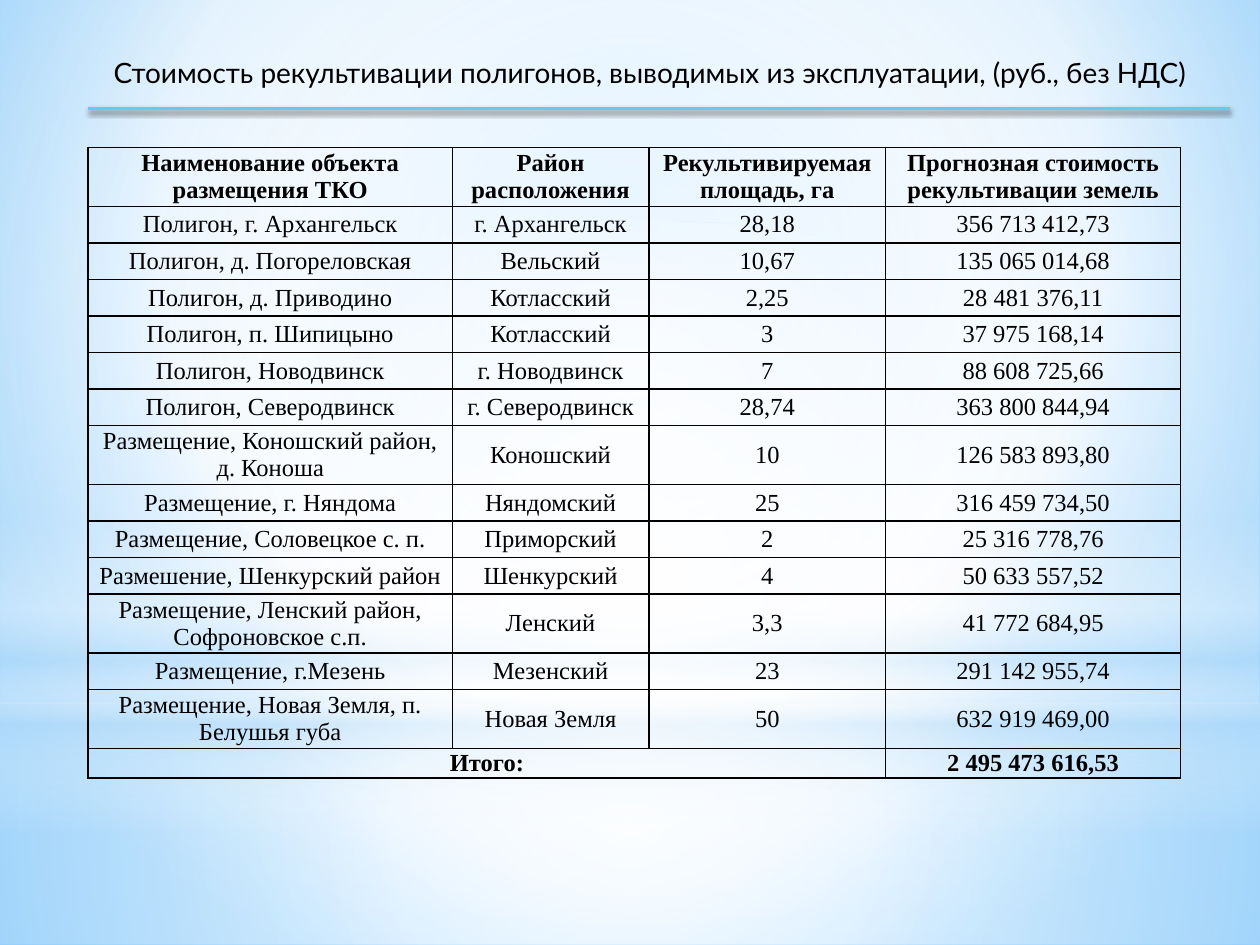
from dataclasses import dataclass
from typing import NamedTuple, Optional

from lxml.etree import SubElement
from pptx import Presentation
from pptx.dml.color import RGBColor
from pptx.enum.shapes import MSO_CONNECTOR, MSO_SHAPE
from pptx.enum.text import MSO_ANCHOR, MSO_AUTO_SIZE, PP_ALIGN
from pptx.oxml import parse_xml
from pptx.oxml.ns import nsdecls, qn
from pptx.util import Inches, Pt


@dataclass(frozen=True)
class Theme:
    black: str = "000000"
    white: str = "FFFFFF"
    pale: str = "B4DCFA"
    sky: str = "9ED5FF"
    deep: str = "5BB9FF"
    accent: str = "5ECCF3"
    title_font: str = "Lato"
    table_font: str = "Times New Roman"
    title_size: int = 16
    table_size: int = 14
    border_width: int = 1
    rule_width: int = 2


class Box(NamedTuple):
    """Position and size in percent of the slide."""
    left: float
    top: float
    width: float
    height: float


class Stop(NamedTuple):
    position: int
    color: str
    opacity: int = 100


class Gradient(NamedTuple):
    stops: tuple[Stop, ...]
    focus: Optional[tuple[int, int, int, int]] = (50, 50, 50, 50)


class Backdrop(NamedTuple):
    kind: MSO_SHAPE
    box: Box
    gradient: Gradient


class Site(NamedTuple):
    name: str
    district: str
    area: str
    cost: str


THEME = Theme()
WIDTH, HEIGHT = Inches(10), Inches(7.5)
TITLE = "Стоимость рекультивации полигонов, выводимых из эксплуатации, (руб., без НДС)"
TITLE_BOX = Box(5.5, 5.2, 92.2, 4.93)
RULE_BOX = Box(7, 11.47, 90.6, 0)
TABLE_BOX = Box(7, 15.6, 86.7, 66.93)
COLUMNS = (28.9, 15.6, 18.8, 23.4)
HEADER_HEIGHT, ROW_HEIGHT, TOTAL_HEIGHT = 5.87, 3.87, 2.8
PAGE = Gradient((Stop(0, THEME.sky), Stop(60, THEME.white), Stop(100, THEME.deep)),
                (20, 10, 20, 60))
BACKDROPS = (
    Backdrop(MSO_SHAPE.RECTANGLE, Box(0, 74.4, 100, 25.6), Gradient((
        Stop(0, THEME.white, 91), Stop(37, THEME.white, 76), Stop(100, THEME.pale, 79)))),
    Backdrop(MSO_SHAPE.RECTANGLE, Box(0, 0, 100, 74.4), Gradient((
        Stop(0, THEME.white, 89), Stop(48, THEME.white, 62), Stop(100, THEME.pale, 79)))),
    Backdrop(MSO_SHAPE.RECTANGLE, Box(0, 54.93, 100, 33.33), Gradient((
        Stop(0, THEME.white, 0), Stop(29, THEME.white, 30), Stop(45, THEME.pale, 40),
        Stop(55, THEME.white, 26), Stop(65, THEME.pale, 60), Stop(100, THEME.white, 0)), None)),
    Backdrop(MSO_SHAPE.OVAL, Box(0, 23.33, 100, 74.4), Gradient((
        Stop(0, THEME.white), Stop(56, THEME.white, 0)))),
)
HEADER = Site("Наименование объекта размещения ТКО", "Район расположения",
              "Рекультивируемая площадь, га", "Прогнозная стоимость рекультивации земель")
SITES = (
    Site("Полигон, г. Архангельск", "г. Архангельск", "28,18", "356 713 412,73"),
    Site("Полигон, д. Погореловская", "Вельский", "10,67", "135 065 014,68"),
    Site("Полигон, д. Приводино", "Котласский", "2,25", "28 481 376,11"),
    Site("Полигон, п. Шипицыно", "Котласский", "3", "37 975 168,14"),
    Site("Полигон, Новодвинск", "г. Новодвинск", "7", "88 608 725,66"),
    Site("Полигон, Северодвинск", "г. Северодвинск", "28,74", "363 800 844,94"),
    Site("Размещение, Коношский район, д. Коноша", "Коношский", "10", "126 583 893,80"),
    Site("Размещение, г. Няндома", "Няндомский", "25", "316 459 734,50"),
    Site("Размещение, Соловецкое с. п.", "Приморский", "2", "25 316 778,76"),
    Site("Размешение, Шенкурский район", "Шенкурский", "4", "50 633 557,52"),
    Site("Размещение, Ленский район, Софроновское с.п.", "Ленский", "3,3", "41 772 684,95"),
    Site("Размещение, г.Мезень", "Мезенский", "23", "291 142 955,74"),
    Site("Размещение, Новая Земля, п. Белушья губа", "Новая Земля", "50", "632 919 469,00"),
)
TOTAL = Site("Итого:", "", "", "2 495 473 616,53")


def across(share: float) -> int:
    return round(WIDTH * share / 100)


def down(share: float) -> int:
    return round(HEIGHT * share / 100)


def place(box: Box) -> tuple[int, int, int, int]:
    return across(box.left), down(box.top), across(box.width), down(box.height)


def set_gradient(owner, fill, gradient: Gradient) -> None:
    stops = "".join(
        f'<a:gs pos="{stop.position * 1000}"><a:srgbClr val="{stop.color}">'
        f'<a:alpha val="{stop.opacity * 1000}"/></a:srgbClr></a:gs>' for stop in gradient.stops)
    direction = '<a:lin ang="5400000" scaled="0"/>'
    if gradient.focus:
        sides = " ".join(f'{side}="{share * 1000}"' for side, share in zip("ltrb", gradient.focus))
        direction = f'<a:path path="circle"><a:fillToRect {sides}/></a:path>'
    fill.solid()
    solid = owner.find(f".//{qn('a:solidFill')}")
    solid.getparent().replace(solid, parse_xml(
        f'<a:gradFill {nsdecls("a")} rotWithShape="1"><a:gsLst>{stops}</a:gsLst>'
        f'{direction}</a:gradFill>'))


def style_font(paragraph, name: str, size: int, bold: bool) -> None:
    paragraph.alignment = PP_ALIGN.CENTER
    paragraph.font.name = name
    paragraph.font.size = Pt(size)
    paragraph.font.bold = bold
    paragraph.font.color.rgb = RGBColor.from_string(THEME.black)


def draw_backdrop(slide, backdrop: Backdrop) -> None:
    shape = slide.shapes.add_shape(backdrop.kind, *place(backdrop.box))
    shape.shadow.inherit = False
    shape.line.fill.background()
    set_gradient(shape.element, shape.fill, backdrop.gradient)
    slide.shapes.title.element.addprevious(shape.element)


def draw_title(slide) -> None:
    title = slide.shapes.title
    title.left, title.top, title.width, title.height = place(TITLE_BOX)
    frame = title.text_frame
    frame.text = TITLE
    frame.word_wrap = True
    frame.vertical_anchor = MSO_ANCHOR.TOP
    frame.auto_size = MSO_AUTO_SIZE.SHAPE_TO_FIT_TEXT
    style_font(frame.paragraphs[0], THEME.title_font, THEME.title_size, False)


def draw_rule(slide) -> None:
    left, top, width, height = place(RULE_BOX)
    rule = slide.shapes.add_connector(MSO_CONNECTOR.STRAIGHT, left, top, left + width, top + height)
    rule.line.color.rgb = RGBColor.from_string(THEME.accent)
    rule.line.width = Pt(THEME.rule_width)
    rule.element.spPr.append(parse_xml(
        f'<a:effectLst {nsdecls("a")}><a:outerShdw blurRad="{Pt(3.1)}" dist="{Pt(1.8)}" '
        f'dir="5400000" rotWithShape="0"><a:srgbClr val="{THEME.black}">'
        '<a:alpha val="45000"/></a:srgbClr></a:outerShdw></a:effectLst>'))


def format_cell(cell, text: str, bold: bool) -> None:
    cell.text = text
    cell.vertical_anchor = MSO_ANCHOR.MIDDLE
    cell.margin_left = cell.margin_right = Inches(0.06)
    cell.margin_top = cell.margin_bottom = 0
    style_font(cell.text_frame.paragraphs[0], THEME.table_font, THEME.table_size, bold)
    properties = cell._tc.get_or_add_tcPr()
    for side in "LRTB":
        border = SubElement(properties, qn(f"a:ln{side}"), w=str(Pt(THEME.border_width)))
        SubElement(SubElement(border, qn("a:solidFill")), qn("a:srgbClr"), val=THEME.black)
    cell.fill.background()


def draw_table(slide) -> None:
    records = (HEADER, *SITES, TOTAL)
    heights = (HEADER_HEIGHT, *[ROW_HEIGHT] * len(SITES), TOTAL_HEIGHT)
    table = slide.shapes.add_table(len(records), len(COLUMNS), *place(TABLE_BOX)).table
    table.first_row = table.horz_banding = False
    for column, share in zip(table.columns, COLUMNS):
        column.width = across(share)
    for row, share, record in zip(table.rows, heights, records):
        row.height = down(share)
        for cell, text in zip(row.cells, record):
            format_cell(cell, text, record in (HEADER, TOTAL))
    last = len(records) - 1
    table.cell(last, 0).merge(table.cell(last, 2))


def main() -> None:
    """Build the slide with landfill reclamation costs."""
    presentation = Presentation()
    presentation.slide_width, presentation.slide_height = WIDTH, HEIGHT
    slide = presentation.slides.add_slide(presentation.slide_layouts[5])
    set_gradient(slide.element, slide.background.fill, PAGE)
    for backdrop in BACKDROPS:
        draw_backdrop(slide, backdrop)
    draw_title(slide)
    draw_rule(slide)
    draw_table(slide)
    presentation.save("out.pptx")


if __name__ == "__main__":
    main()
